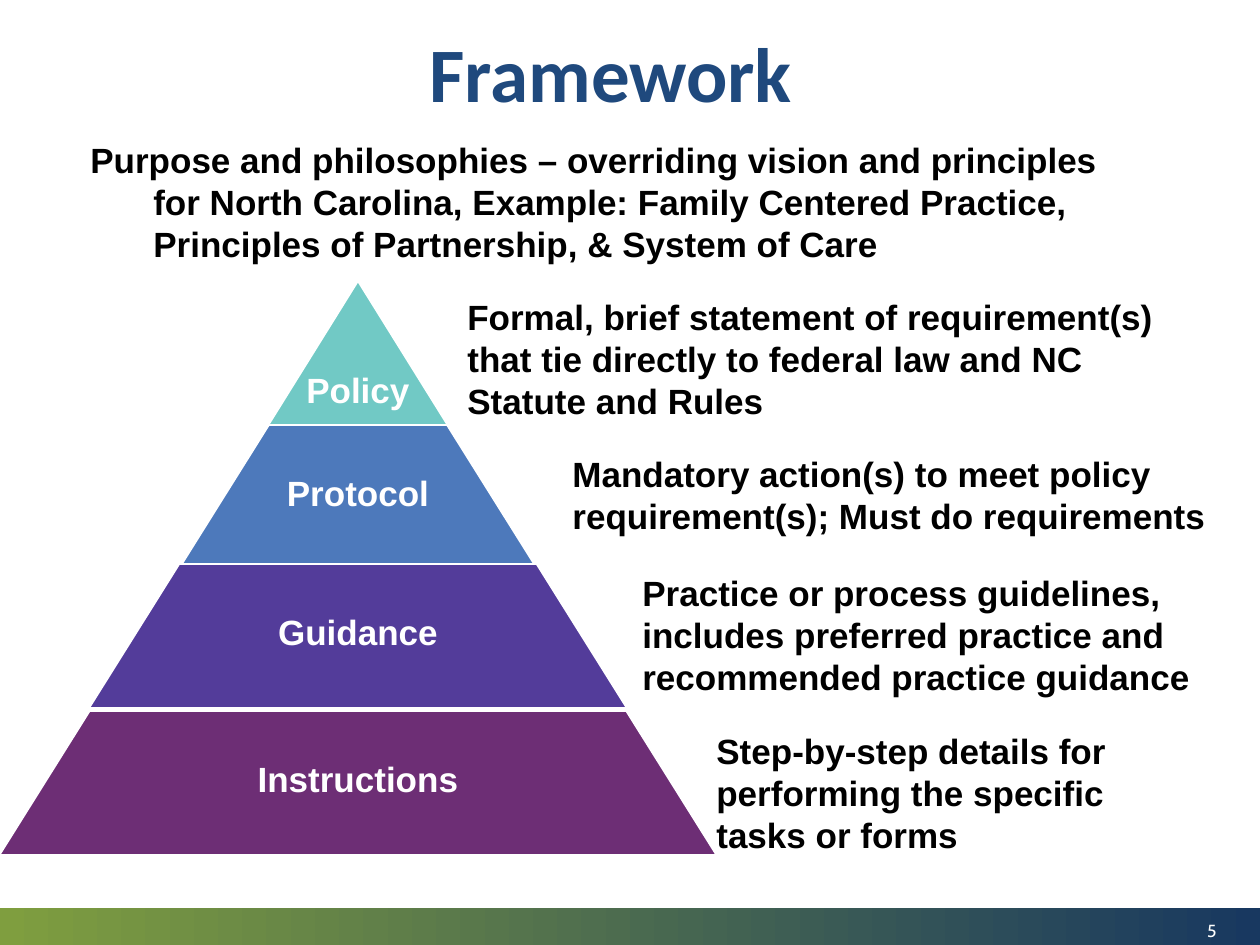
from pptx import Presentation
from pptx import util as u
from pptx.dml.color import RGBColor
from pptx.enum import shapes, text

SCALE = 914400 / 126
WHITE = RGBColor(0xFF, 0xFF, 0xFF)
BLACK = RGBColor(0, 0, 0)
NAVY = RGBColor(0x1F, 0x49, 0x7D)
BAND_COLORS = (RGBColor(0x7F, 0x9E, 0x3F), RGBColor(0x18, 0x38, 0x60))

PYRAMID_CENTER, PYRAMID_WIDTH, TIER_HEIGHT = 358, 717, 144
SLOPE = 0.626
# label, top, space below the label, colour
TIERS = (
    ("Policy", 281, 14, RGBColor(0x71, 0xC9, 0xC5)),
    ("Protocol", 425, 55, RGBColor(0x4D, 0x79, 0xBB)),
    ("Guidance", 564, 55, RGBColor(0x53, 0x3C, 0x9A)),
    ("Instructions", 711, 55, RGBColor(0x6D, 0x2E, 0x75)),
)
# left, top, width, height, wording
DESCRIPTIONS = (
    (455, 289, 743, 140, "Formal, brief statement of requirement(s) that tie "
                         "directly to federal law and NC Statute and Rules"),
    (560, 446, 700, 97, "Mandatory action(s) to meet policy requirement(s); "
                        "Must do requirements"),
    (630, 565, 631, 140, "Practice or process guidelines, includes preferred "
                         "practice and recommended practice guidance"),
    (704, 723, 518, 140, "Step-by-step details for performing the specific\n"
                         "tasks or forms"),
)
PURPOSE = ("Purpose and philosophies – overriding vision and principles for "
           "North Carolina, Example: Family Centered Practice, "
           "Principles of Partnership, & System of Care")


def px(length):
    return u.Emu(round(length * SCALE))


def box(*lengths):
    return [px(length) for length in lengths]


def write(frame, wording, size=20, color=BLACK, font="Arial", bold=True,
          align=text.PP_ALIGN.LEFT):
    frame.text = wording
    for paragraph in frame.paragraphs:
        paragraph.alignment = align
        for run in paragraph.runs:
            run.font.size = u.Pt(size)
            run.font.name = font
            run.font.bold = bold
            run.font.color.rgb = color


def add_title(slide):
    title = slide.shapes.title
    title.left, title.top, title.width, title.height = box(69, 11, 1084, 114)
    frame = title.text_frame
    write(frame, "Framework", 44, NAVY, "Calibri", align=text.PP_ALIGN.CENTER)
    frame.vertical_anchor = text.MSO_ANCHOR.BOTTOM
    frame.paragraphs[0].line_spacing = 0.9


def add_footer(slide):
    band = slide.shapes.add_shape(shapes.MSO_SHAPE.RECTANGLE,
                                  *box(0, 908, 1260, 38))
    band.shadow.inherit = False
    band.line.fill.background()
    band.fill.gradient()
    band.fill.gradient_angle = 0
    for stop, color, position in zip(band.fill.gradient_stops, BAND_COLORS, (0, 1)):
        stop.color.rgb = color
        stop.position = position

    number = slide.shapes.add_textbox(*box(945, 921, 284, 19)).text_frame
    write(number, "5", 10, WHITE, "Cabin", False, text.PP_ALIGN.RIGHT)
    number.vertical_anchor = text.MSO_ANCHOR.MIDDLE


def add_tier(slide, level, label, top, space_below, color):
    """Level counts from 1 at the tip; each one is a step wider."""
    width = PYRAMID_WIDTH * level / len(TIERS)
    tier = slide.shapes.add_shape(
        shapes.MSO_SHAPE.TRAPEZOID,
        *box(PYRAMID_CENTER - width / 2, top, width, TIER_HEIGHT))
    tier.adjustments[0] = SLOPE
    tier.shadow.inherit = False
    tier.fill.solid()
    tier.fill.fore_color.rgb = color
    tier.line.color.rgb = WHITE
    tier.line.width = u.Pt(1)
    frame = tier.text_frame
    frame.word_wrap = False
    frame.vertical_anchor = text.MSO_ANCHOR.BOTTOM
    frame.margin_left = frame.margin_right = frame.margin_top = 0
    frame.margin_bottom = px(space_below)
    write(frame, label, color=WHITE, align=text.PP_ALIGN.CENTER)
    frame.paragraphs[0].line_spacing = 0.9


def add_description(slide, left, top, width, height, wording):
    frame = slide.shapes.add_textbox(*box(left, top, width, height)).text_frame
    frame.word_wrap = True
    write(frame, wording)
    return frame


def add_purpose(slide):
    frame = add_description(slide, 78, 132, 1084, 140, PURPOSE)
    properties = frame.paragraphs[0]._p.get_or_add_pPr()
    properties.set("marL", str(px(63)))
    properties.set("indent", str(-px(63)))


def main():
    deck = Presentation()
    deck.slide_width, deck.slide_height = box(1260, 945)
    slide = deck.slides.add_slide(deck.slide_layouts.get_by_name("Title Only"))
    add_footer(slide)
    add_title(slide)
    add_purpose(slide)
    for level, tier in enumerate(TIERS, 1):
        add_tier(slide, level, *tier)
    for description in DESCRIPTIONS:
        add_description(slide, *description)
    deck.save("out.pptx")


if __name__ == "__main__":
    main()
